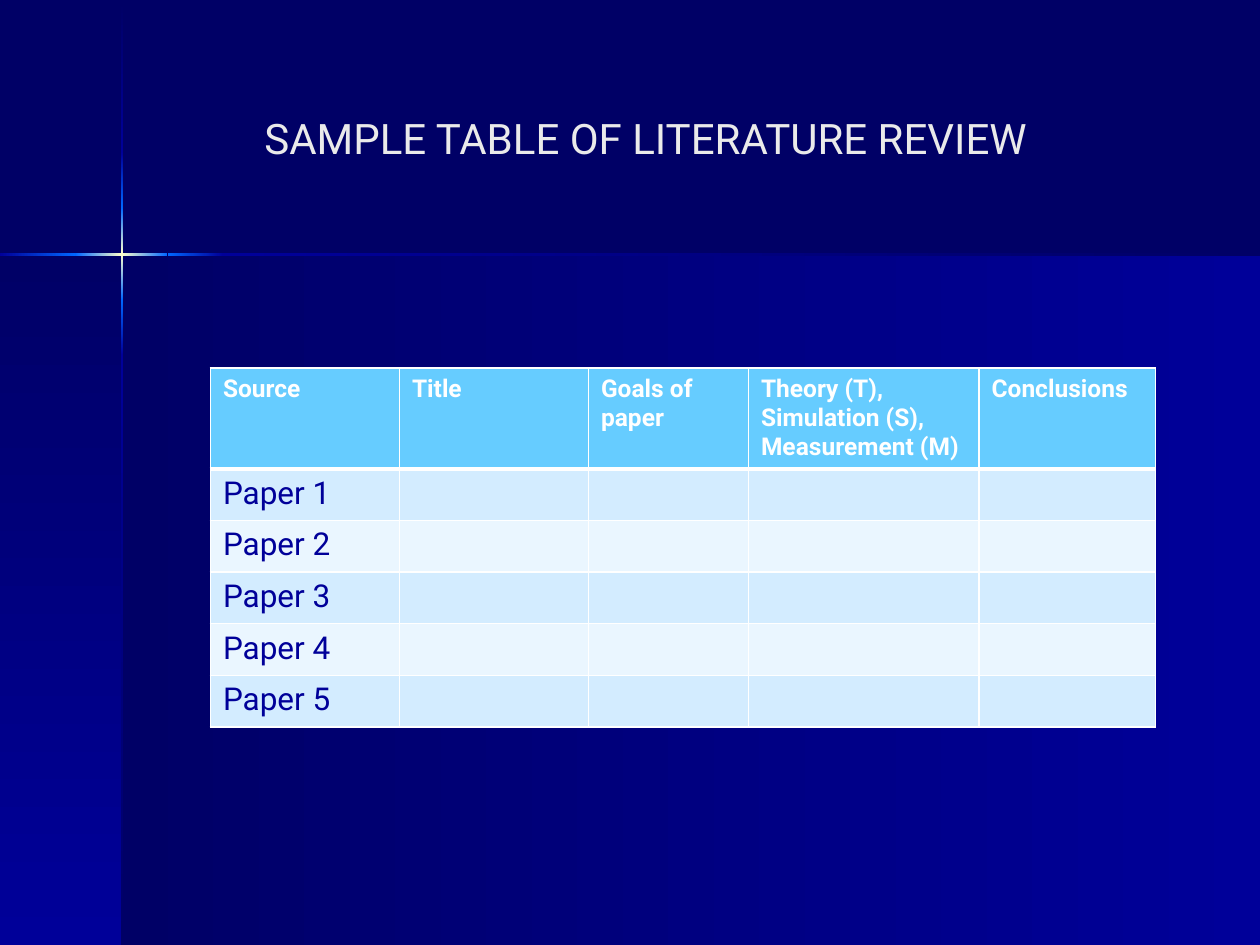
from copy import deepcopy
from typing import NamedTuple

from lxml import etree
from pptx import Presentation
from pptx.dml.color import RGBColor
from pptx.enum.shapes import MSO_SHAPE
from pptx.enum.text import MSO_ANCHOR
from pptx.oxml.ns import qn
from pptx.util import Inches, Pt

NAVY = RGBColor(0x00, 0x00, 0x66)
BLUE = RGBColor(0x00, 0x00, 0x99)
BRIGHT = RGBColor(0x00, 0x66, 0xFF)
GLOW = RGBColor(0xFF, 0xFF, 0xCC)
SKY = RGBColor(0x66, 0xCC, 0xFF)
PALE = RGBColor(0xD3, 0xEC, 0xFF)
PALER = RGBColor(0xEA, 0xF6, 0xFF)
WHITE = RGBColor(0xFF, 0xFF, 0xFF)
TITLE_GREY = RGBColor(0xEA, 0xEA, 0xEA)

FONT = "Roboto"
WIDTH, HEIGHT = 10, 7.5
CROSS_X, CROSS_Y = 0.97, 2.02
RAY = 0.02

HEADERS = [
    "Source",
    "Title",
    "Goals of paper",
    "Theory (T), Simulation (S), Measurement (M)",
    "Conclusions",
]
COLUMN_WIDTHS = [1.5, 1.5, 1.27, 1.83, 1.4]
PAPER_COUNT = 5
HEADER_HEIGHT, ROW_HEIGHT = 0.78, 0.41


class Band(NamedTuple):
    left: float
    top: float
    width: float
    height: float
    colors: tuple[RGBColor, ...]
    vertical: bool


class RaySegment(NamedTuple):
    start: float
    end: float
    colors: tuple[RGBColor, ...]


PANELS = [
    Band(CROSS_X, CROSS_Y, WIDTH - CROSS_X, HEIGHT - CROSS_Y, (NAVY, BLUE), False),
    Band(0, CROSS_Y, CROSS_X, HEIGHT - CROSS_Y, (NAVY, BLUE), True),
]
HORIZONTAL_RAY = [
    RaySegment(0, 0.6, (BLUE, BRIGHT)),
    RaySegment(1.33, 1.77, (BRIGHT, BLUE)),
    RaySegment(1.77, WIDTH, (BLUE, NAVY)),
    RaySegment(0.6, 1.33, (BRIGHT, GLOW, BRIGHT)),
]
VERTICAL_RAY = [
    RaySegment(0.01, 1.21, (NAVY, BLUE)),
    RaySegment(1.21, 1.65, (BLUE, BRIGHT)),
    RaySegment(2.38, 2.82, (BRIGHT, BLUE)),
    RaySegment(2.82, HEIGHT, (BLUE, NAVY)),
    RaySegment(1.65, 2.38, (BRIGHT, GLOW, BRIGHT)),
]


def ray_band(segment: RaySegment, vertical: bool) -> Band:
    length = segment.end - segment.start
    if vertical:
        return Band(CROSS_X - RAY / 2, segment.start, RAY, length, segment.colors, True)
    return Band(segment.start, CROSS_Y - RAY / 2, length, RAY, segment.colors, False)


def draw_band(slide, band: Band) -> None:
    shape = slide.shapes.add_shape(
        MSO_SHAPE.RECTANGLE,
        Inches(band.left), Inches(band.top), Inches(band.width), Inches(band.height),
    )
    shape.shadow.inherit = False
    shape.line.fill.background()
    fill = shape.fill
    fill.gradient()
    # python-pptx measures the angle counter-clockwise
    fill.gradient_angle = 270 if band.vertical else 0
    stop_list = shape._element.spPr.find(".//" + qn("a:gsLst"))
    for _ in band.colors[2:]:
        stop_list.append(deepcopy(stop_list[-1]))
    last = len(band.colors) - 1
    for index, (stop, color) in enumerate(zip(fill.gradient_stops, band.colors)):
        stop.color.rgb = color
        stop.position = index / last


def set_font(paragraph, size: float, color: RGBColor, bold: bool = False) -> None:
    font = paragraph.font
    font.name = FONT
    font.size = Pt(size)
    font.bold = bold
    font.color.rgb = color


def set_borders(cell, bottom_width: float) -> None:
    properties = cell._tc.get_or_add_tcPr()
    for side, width in (("L", 1), ("R", 1), ("T", 1), ("B", bottom_width)):
        line = etree.SubElement(properties, qn(f"a:ln{side}"), w=str(Pt(width)))
        solid = etree.SubElement(line, qn("a:solidFill"))
        etree.SubElement(solid, qn("a:srgbClr"), val=str(WHITE))


def draw_title(slide) -> None:
    box = slide.shapes.add_textbox(Inches(2), Inches(0.6), Inches(7.32), Inches(0.98))
    frame = box.text_frame
    frame.word_wrap = True
    frame.vertical_anchor = MSO_ANCHOR.MIDDLE
    frame.text = "SAMPLE TABLE OF LITERATURE REVIEW"
    set_font(frame.paragraphs[0], 24, TITLE_GREY)


def draw_review_table(slide) -> None:
    table = slide.shapes.add_table(
        PAPER_COUNT + 1, len(HEADERS),
        Inches(1.67), Inches(2.92), Inches(sum(COLUMN_WIDTHS)),
        Inches(HEADER_HEIGHT + PAPER_COUNT * ROW_HEIGHT),
    ).table
    for column, width in zip(table.columns, COLUMN_WIDTHS):
        column.width = Inches(width)

    for row_index, row in enumerate(table.rows):
        is_header = row_index == 0
        row.height = Inches(HEADER_HEIGHT if is_header else ROW_HEIGHT)
        row_fill = SKY if is_header else (PALE if row_index % 2 else PALER)
        texts = HEADERS if is_header else [f"Paper {row_index}"]
        for cell in row.cells:
            set_borders(cell, 3 if is_header else 1)
            cell.fill.solid()
            cell.fill.fore_color.rgb = row_fill
        for cell, text in zip(row.cells, texts):
            cell.text = text
            paragraph = cell.text_frame.paragraphs[0]
            if is_header:
                set_font(paragraph, 14, WHITE, bold=True)
            else:
                set_font(paragraph, 18, BLUE)


def main() -> None:
    presentation = Presentation()
    presentation.slide_width = Inches(WIDTH)
    presentation.slide_height = Inches(HEIGHT)
    slide = presentation.slides.add_slide(presentation.slide_layouts[6])
    slide.background.fill.solid()
    slide.background.fill.fore_color.rgb = NAVY

    rays = [ray_band(segment, True) for segment in VERTICAL_RAY]
    rays += [ray_band(segment, False) for segment in HORIZONTAL_RAY]
    for band in PANELS + rays:
        draw_band(slide, band)
    draw_title(slide)
    draw_review_table(slide)
    presentation.save("out.pptx")


if __name__ == "__main__":
    main()
